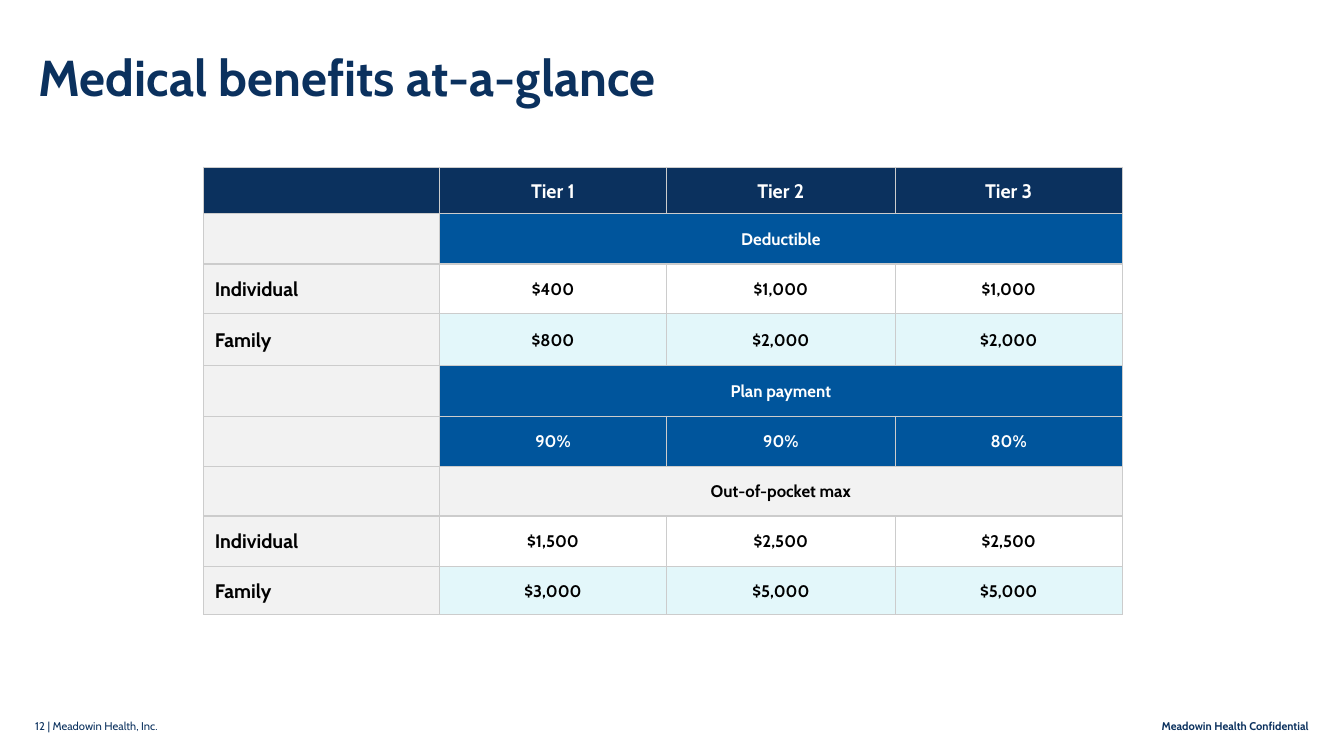
from lxml.etree import SubElement
from pptx import Presentation
from pptx.dml.color import RGBColor
from pptx.enum.text import MSO_ANCHOR, MSO_AUTO_SIZE, PP_ALIGN
from pptx.oxml import parse_xml
from pptx.oxml.ns import nsdecls, qn
from pptx.util import Inches, Pt

FONT = "Cabin"
NAVY, BLUE, AQUA = "0B315E", "00559C", "77D8E8"
GREY, RULE, WHITE, BLACK = "F2F2F2", "CCCCCC", "FFFFFF", "000000"
HEAD, BAND, PLAIN, TINT, PALE = (
    (NAVY, WHITE), (BLUE, WHITE), (WHITE, BLACK), (AQUA, BLACK), (GREY, BLACK))

WIDTHS = [2.34, 2.25, 2.27, 2.25]
ROWS = [
    (0.46, HEAD, "", ["Tier 1", "Tier 2", "Tier 3"]),
    (0.5, BAND, "", ["Deductible"]),
    (0.49, PLAIN, "Individual", ["$400", "$1,000", "$1,000"]),
    (0.52, TINT, "Family", ["$800", "$2,000", "$2,000"]),
    (0.5, BAND, "", ["Plan payment"]),
    (0.5, BAND, "", ["90%", "90%", "80%"]),
    (0.49, PALE, "", ["Out-of-pocket max"]),
    (0.5, PLAIN, "Individual", ["$1,500", "$2,500", "$2,500"]),
    (0.48, TINT, "Family", ["$3,000", "$5,000", "$5,000"]),
]


def paint(code):
    return RGBColor.from_string(code)


def write(frame, text, size, tone, bold=True, align=PP_ALIGN.LEFT):
    para = frame.paragraphs[0]
    para.alignment = align
    run = para.add_run()
    run.text = text
    run.font.name = FONT
    run.font.size = Pt(size)
    run.font.bold = bold
    run.font.color.rgb = paint(tone)
    return para


def place(shape, box):
    shape.left, shape.top, shape.width, shape.height = map(Inches, box)


def add_title(slide, box, text):
    title = slide.shapes.title
    place(title, box)
    frame = title.text_frame
    frame.margin_left = frame.margin_right = 0
    frame.margin_top = frame.margin_bottom = 0
    frame.vertical_anchor = MSO_ANCHOR.TOP
    frame.auto_size = MSO_AUTO_SIZE.NONE
    write(frame, text, 36, NAVY).line_spacing = 0.9


def add_foot(slide, box, text, bold, align):
    frame = slide.shapes.add_textbox(*map(Inches, box)).text_frame
    frame.word_wrap = True
    frame.auto_size = MSO_AUTO_SIZE.SHAPE_TO_FIT_TEXT
    write(frame, text, 8, NAVY, bold, align)


def fill_cell(cell, tone):
    cell.fill.solid()
    cell.fill.fore_color.rgb = paint(tone)
    props = cell._tc.get_or_add_tcPr()
    if tone == AQUA:
        color = props.find(".//" + qn("a:srgbClr"))
        SubElement(color, qn("a:alpha"), val="20000")
    for spot, side in enumerate("LRTB"):
        props.insert(spot, parse_xml(
            f'<a:ln{side} {nsdecls("a")} w="12700"><a:solidFill>'
            f'<a:srgbClr val="{RULE}"/></a:solidFill></a:ln{side}>'))


def label(cell, text, size, tone, align):
    cell.vertical_anchor = MSO_ANCHOR.MIDDLE
    cell.margin_left = cell.margin_right = cell.margin_top = Inches(0.01)
    cell.margin_bottom = 0
    para = write(cell.text_frame, text, size, tone, True, align)
    if align == PP_ALIGN.LEFT:
        props = para._p.get_or_add_pPr()
        props.set("marL", str(Inches(0.1)))
        props.set("indent", "0")


def add_grid(slide, box):
    table = slide.shapes.add_table(
        len(ROWS), len(WIDTHS), *map(Inches, box)).table
    table.first_row = table.horz_banding = False
    for column, width in zip(table.columns, WIDTHS):
        column.width = Inches(width)
    for index, (height, (back, ink), name, values) in enumerate(ROWS):
        table.rows[index].height = Inches(height)
        cells = [table.cell(index, col) for col in range(len(WIDTHS))]
        fill_cell(cells[0], NAVY if index == 0 else GREY)
        for cell in cells[1:]:
            fill_cell(cell, back)
        if len(values) == 1:
            cells[1].merge(cells[-1])
        if name:
            label(cells[0], name, 14, BLACK, PP_ALIGN.LEFT)
        for cell, value in zip(cells[1:], values):
            label(cell, value, 14 if index == 0 else 12, ink, PP_ALIGN.CENTER)


def main():
    deck = Presentation()
    deck.slide_width, deck.slide_height = Inches(13.33), Inches(7.5)
    slide = deck.slides.add_slide(deck.slide_layouts[5])
    add_foot(slide, (0.25, 7.09, 10.35, 0.24),
             "12 | Meadowin Health, Inc.", False, PP_ALIGN.LEFT)
    add_foot(slide, (11.02, 7.09, 2.06, 0.24),
             "Meadowin Health Confidential", True, PP_ALIGN.RIGHT)
    add_title(slide, (0.38, 0.53, 12.84, 0.46), "Medical benefits at-a-glance")
    add_grid(slide, (2.02, 1.66, sum(WIDTHS), sum(row[0] for row in ROWS)))
    deck.save("out.pptx")


if __name__ == "__main__":
    main()
